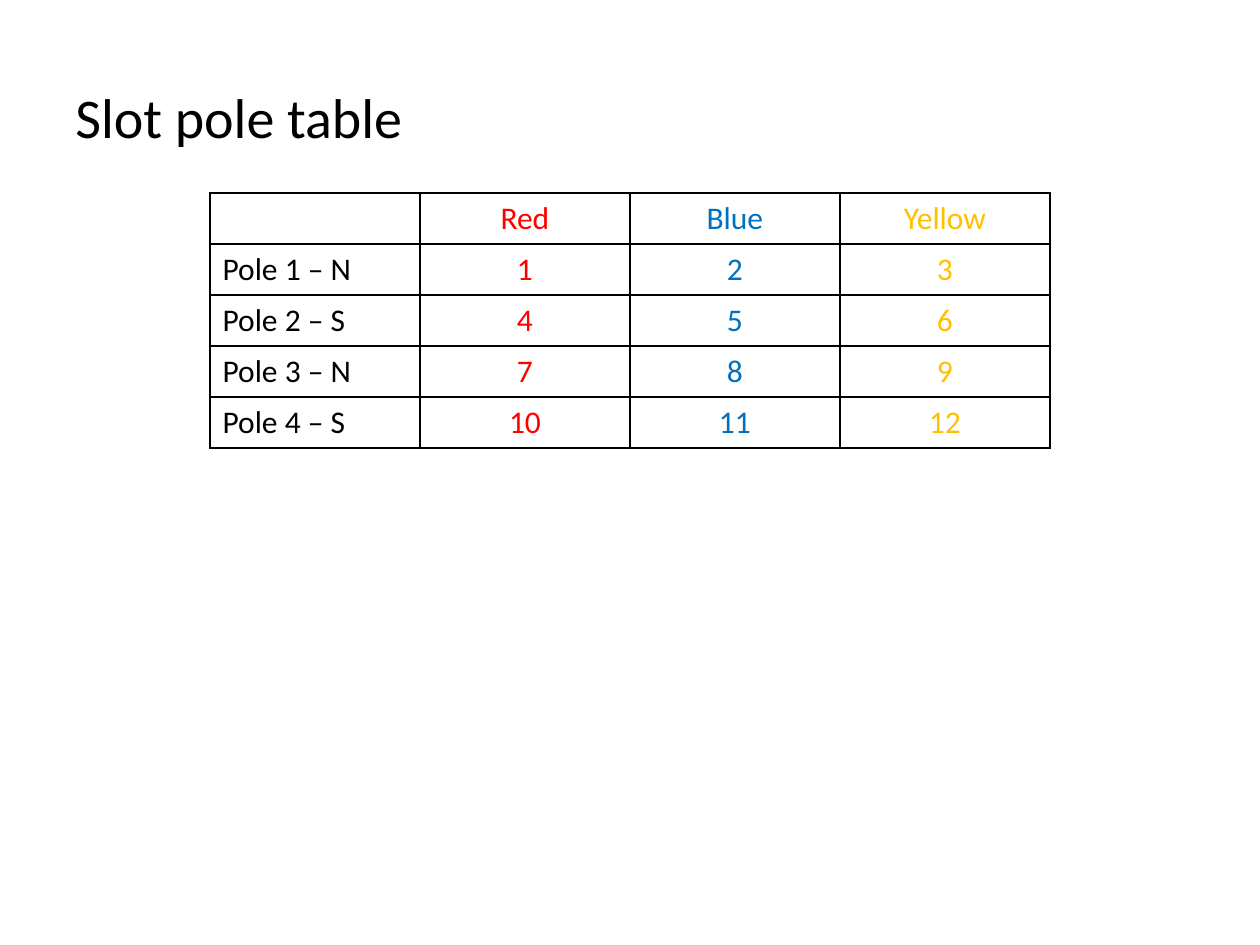
from dataclasses import dataclass

from lxml import etree
from pptx import Presentation
from pptx.dml.color import RGBColor
from pptx.enum.text import PP_ALIGN
from pptx.oxml.ns import qn
from pptx.util import Pt

LEFT, MID = PP_ALIGN.LEFT, PP_ALIGN.CENTER
FONT = "Calibri"
INK = {"black": "000000", "red": "FF0000", "blue": "0070C0", "gold": "FFC000"}
POLES = ("N", "S", "N", "S")
COL, ROW = 210, 51


@dataclass
class Phase:
    name: str
    ink: str


PHASES = [Phase("Red", "red"), Phase("Blue", "blue"), Phase("Yellow", "gold")]


def px(n: int) -> int:
    return round(n * 914400 / 126)


def write(par, text: str, size: int, ink: str, align=LEFT) -> None:
    par.alignment = align
    run = par.add_run()
    run.text = text
    run.font.name = FONT
    run.font.size = Pt(size)
    run.font.color.rgb = RGBColor.from_string(INK[ink])


def frame(cell) -> None:
    """Clear the fill and draw a thin black line on all four sides."""
    props = cell._tc.get_or_add_tcPr()
    for side in ("lnL", "lnR", "lnT", "lnB"):
        line = etree.SubElement(props, qn(f"a:{side}"), w=str(Pt(1)))
        fill = etree.SubElement(line, qn("a:solidFill"))
        etree.SubElement(fill, qn("a:srgbClr"), val=INK["black"])
    cell.fill.background()


def add_title(slide, text: str) -> None:
    box = slide.shapes.add_textbox(px(63), px(73), px(1134), px(771))
    body = box.text_frame
    body.word_wrap = True
    body.margin_top = px(10)
    write(body.paragraphs[0], text, 32, "black")


def add_grid(slide) -> None:
    rows, cols = len(POLES) + 1, len(PHASES) + 1
    grid = slide.shapes.add_table(
        rows, cols, px(210), px(193), px(COL * cols), px(ROW * rows)
    ).table
    for col in grid.columns:
        col.width = px(COL)
    for row in grid.rows:
        row.height = px(ROW)
    for cell in grid.iter_cells():
        frame(cell)

    def put(r: int, c: int, text: str, ink: str, align=MID) -> None:
        write(grid.cell(r, c).text_frame.paragraphs[0], text, 18, ink, align)

    for c, phase in enumerate(PHASES, 1):
        put(0, c, phase.name, phase.ink)
    for r, pole in enumerate(POLES, 1):
        put(r, 0, f"Pole {r} – {pole}", "black", LEFT)
        for c, phase in enumerate(PHASES, 1):
            slot = (r - 1) * len(PHASES) + c
            put(r, c, str(slot), phase.ink)


def main() -> None:
    deck = Presentation()
    deck.slide_width, deck.slide_height = px(1260), px(945)
    slide = deck.slides.add_slide(deck.slide_layouts[6])
    add_title(slide, "Slot pole table")
    add_grid(slide)
    deck.save("out.pptx")


if __name__ == "__main__":
    main()
